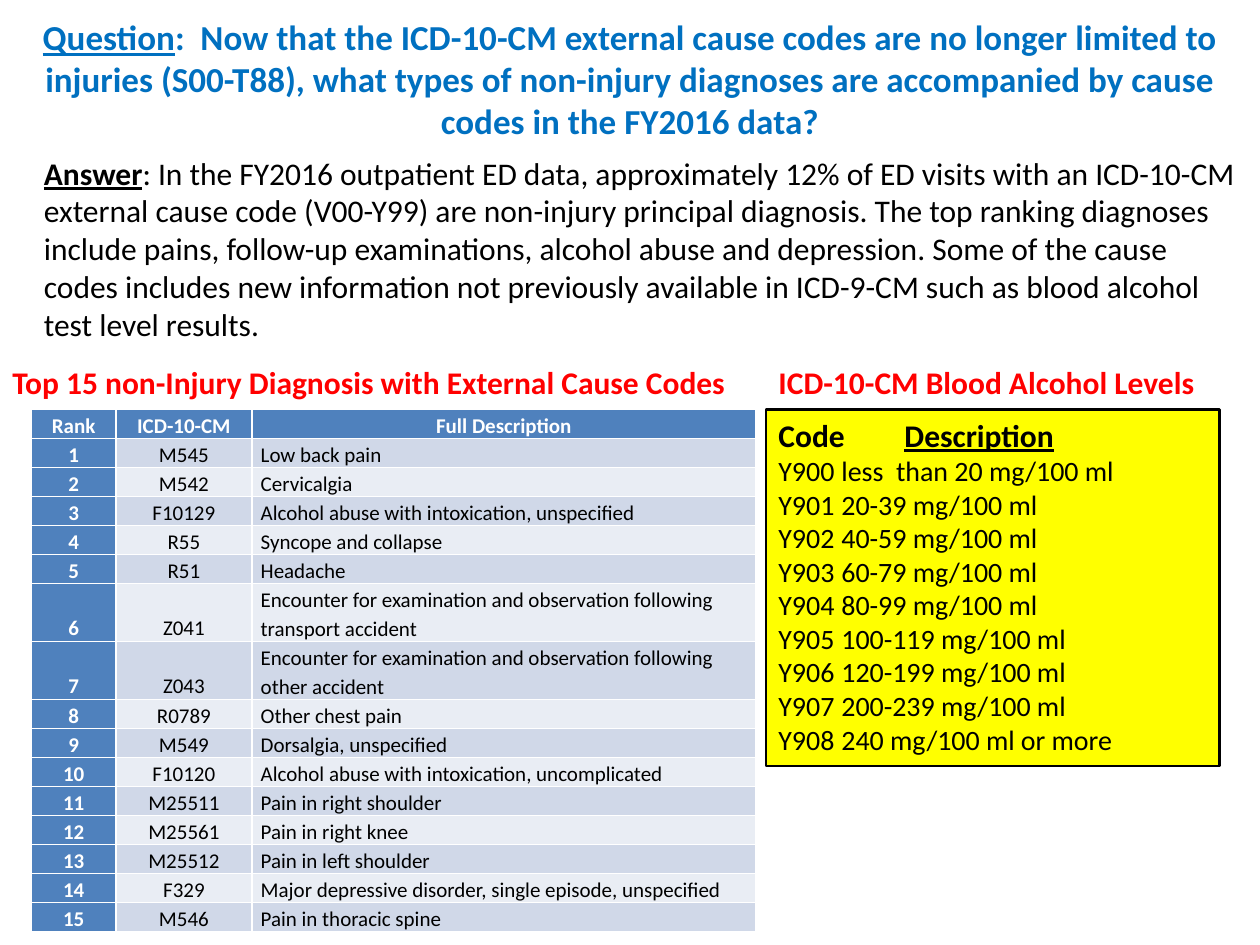
import pptx
import pptx.dml.color
import pptx.enum.shapes
import pptx.enum.text
import pptx.util

Inches, Pt = pptx.util.Inches, pptx.util.Pt
ALIGN = pptx.enum.text.PP_ALIGN
ANCHOR = pptx.enum.text.MSO_ANCHOR

FONT = "Calibri"
COLORS = {
    "question": "0070C0", "heading": "FF0000", "black": "000000", "white": "FFFFFF",
    "header": "4F81BD", "odd row": "D0D8E8", "even row": "E9EDF4", "codes box": "FFFF00",
}

QUESTION = ("Question", ":  Now that the ICD-10-CM external cause codes are no longer limited to "
            "injuries (S00-T88), what types of non-injury diagnoses are accompanied by cause "
            "codes in the FY2016 data?")
ANSWER = ("Answer", ": In the FY2016 outpatient ED data, approximately 12% of ED visits with an "
          "ICD-10-CM external cause code (V00-Y99) are non-injury principal diagnosis. The top "
          "ranking diagnoses include pains, follow-up examinations, alcohol abuse and depression. "
          "Some of the cause codes includes new information not previously available in ICD-9-CM "
          "such as blood alcohol test level results.")
HEADINGS = [  # text, left, width
    ("Top 15 non-Injury Diagnosis with External Cause Codes", 0, 5.9),
    ("ICD-10-CM Blood Alcohol Levels", 6.08, 3.65),
]
TABLE_HEADER = ("Rank", "ICD-10-CM", "Full Description")
COLUMN_WIDTHS = (0.67, 1.08, 4)
DIAGNOSES = [
    ("M545", "Low back pain"),
    ("M542", "Cervicalgia"),
    ("F10129", "Alcohol abuse with intoxication, unspecified"),
    ("R55", "Syncope and collapse"),
    ("R51", "Headache"),
    ("Z041", "Encounter for examination and observation following transport accident"),
    ("Z043", "Encounter for examination and observation following other accident"),
    ("R0789", "Other chest pain"),
    ("M549", "Dorsalgia, unspecified"),
    ("F10120", "Alcohol abuse with intoxication, uncomplicated"),
    ("M25511", "Pain in right shoulder"),
    ("M25561", "Pain in right knee"),
    ("M25512", "Pain in left shoulder"),
    ("F329", "Major depressive disorder, single episode, unspecified"),
    ("M546", "Pain in thoracic spine"),
]
ALCOHOL_LEVELS = [
    "less  than 20 mg/100 ml", "20-39 mg/100 ml", "40-59 mg/100 ml", "60-79 mg/100 ml",
    "80-99 mg/100 ml", "100-119 mg/100 ml", "120-199 mg/100 ml", "200-239 mg/100 ml",
    "240 mg/100 ml or more",
]
ROW_HEIGHT = 0.23
LINE_CHARACTERS = 55  # what fits on one line of the description column


def rgb(name):
    return pptx.dml.color.RGBColor.from_string(COLORS[name])


def style(para, size, color, bold=False, align=ALIGN.LEFT):
    para.alignment = align
    font = para.font
    font.name, font.size, font.bold = FONT, Pt(size), bold
    font.color.rgb = rgb(color)


def add_runs(para, *parts):
    spans = [para.add_run() for _ in parts]
    for span, text in zip(spans, parts):
        span.text = text
    return spans


def add_text_box(slide, left, top, width, height, wrap):
    box = slide.shapes.add_textbox(Inches(left), Inches(top), Inches(width), Inches(height))
    box.text_frame.word_wrap = wrap
    return box.text_frame.paragraphs[0]


def add_question(slide):
    title = slide.shapes.title
    title.left, title.top, title.width, title.height = 0, 0, Inches(10), Inches(1.25)
    title.text_frame.vertical_anchor = ANCHOR.MIDDLE
    para = title.text_frame.paragraphs[0]
    style(para, 20, "question", True, ALIGN.CENTER)
    add_runs(para, *QUESTION)[0].font.underline = True


def add_answer(slide):
    para = add_text_box(slide, 0.25, 1.17, 9.75, 1.62, True)
    style(para, 18, "black")
    label = add_runs(para, *ANSWER)[0]
    label.font.bold = label.font.underline = True


def add_headings(slide):
    for text, left, width in HEADINGS:
        para = add_text_box(slide, left, 2.83, width, 0.4, False)
        style(para, 18, "heading", True)
        para.text = text


def fill_cell(cell, text, fill, color, bold, align):
    cell.fill.solid()
    cell.fill.fore_color.rgb = rgb(fill)
    cell.vertical_anchor = ANCHOR.BOTTOM
    cell.margin_left = cell.margin_right = Inches(0.07)
    cell.margin_top = cell.margin_bottom = 0
    para = cell.text_frame.paragraphs[0]
    para.text = text
    para.line_spacing = 1.15
    style(para, 12, color, bold, align)


def add_diagnosis_table(slide):
    rows = [TABLE_HEADER] + [(str(rank), *entry) for rank, entry in enumerate(DIAGNOSES, 1)]
    heights = [ROW_HEIGHT * (2 if len(row[2]) > LINE_CHARACTERS else 1) for row in rows]
    table = slide.shapes.add_table(
        len(rows), len(COLUMN_WIDTHS), Inches(0.25), Inches(3.25),
        Inches(sum(COLUMN_WIDTHS)), Inches(sum(heights))).table
    table.first_col = True
    for column, width in zip(table.columns, COLUMN_WIDTHS):
        column.width = Inches(width)
    for r, (row, height) in enumerate(zip(rows, heights)):
        table.rows[r].height = Inches(height)
        for c, text in enumerate(row):
            is_header = r == 0 or c == 0
            band = "odd row" if r % 2 else "even row"
            fill_cell(table.cell(r, c), text,
                      "header" if is_header else band,
                      "white" if is_header else "black", is_header,
                      ALIGN.LEFT if r and c == 2 else ALIGN.CENTER)


def add_alcohol_codes(slide):
    box = slide.shapes.add_shape(pptx.enum.shapes.MSO_SHAPE.RECTANGLE,
                                 Inches(6.08), Inches(3.25), Inches(3.6), Inches(2.83))
    box.shadow.inherit = False
    box.fill.solid()
    box.fill.fore_color.rgb = rgb("codes box")
    box.line.color.rgb = rgb("black")
    box.line.width = Pt(1.25)
    frame = box.text_frame
    frame.word_wrap = True
    frame.vertical_anchor = ANCHOR.TOP
    header = frame.paragraphs[0]
    style(header, 18, "black", True)
    add_runs(header, "Code\t", "Description")[1].font.underline = True
    for number, level in enumerate(ALCOHOL_LEVELS):
        para = frame.add_paragraph()
        para.text = f"Y90{number}\t{level}"
        style(para, 16, "black")


def main():
    deck = pptx.Presentation()
    deck.slide_width, deck.slide_height = Inches(10), Inches(7.5)
    slide = deck.slides.add_slide(deck.slide_layouts.get_by_name("Title Only"))
    add_question(slide)
    add_answer(slide)
    add_diagnosis_table(slide)
    add_alcohol_codes(slide)
    add_headings(slide)
    deck.save("out.pptx")


if __name__ == "__main__":
    main()
